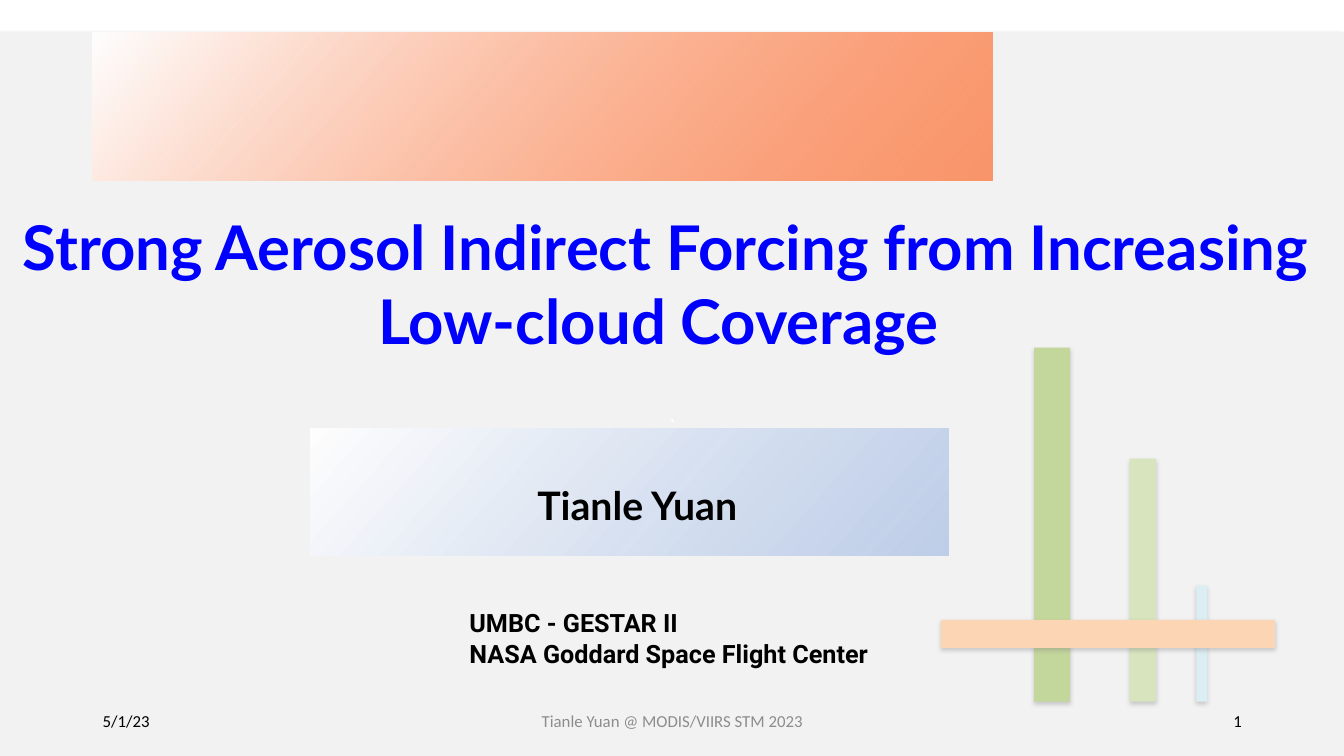
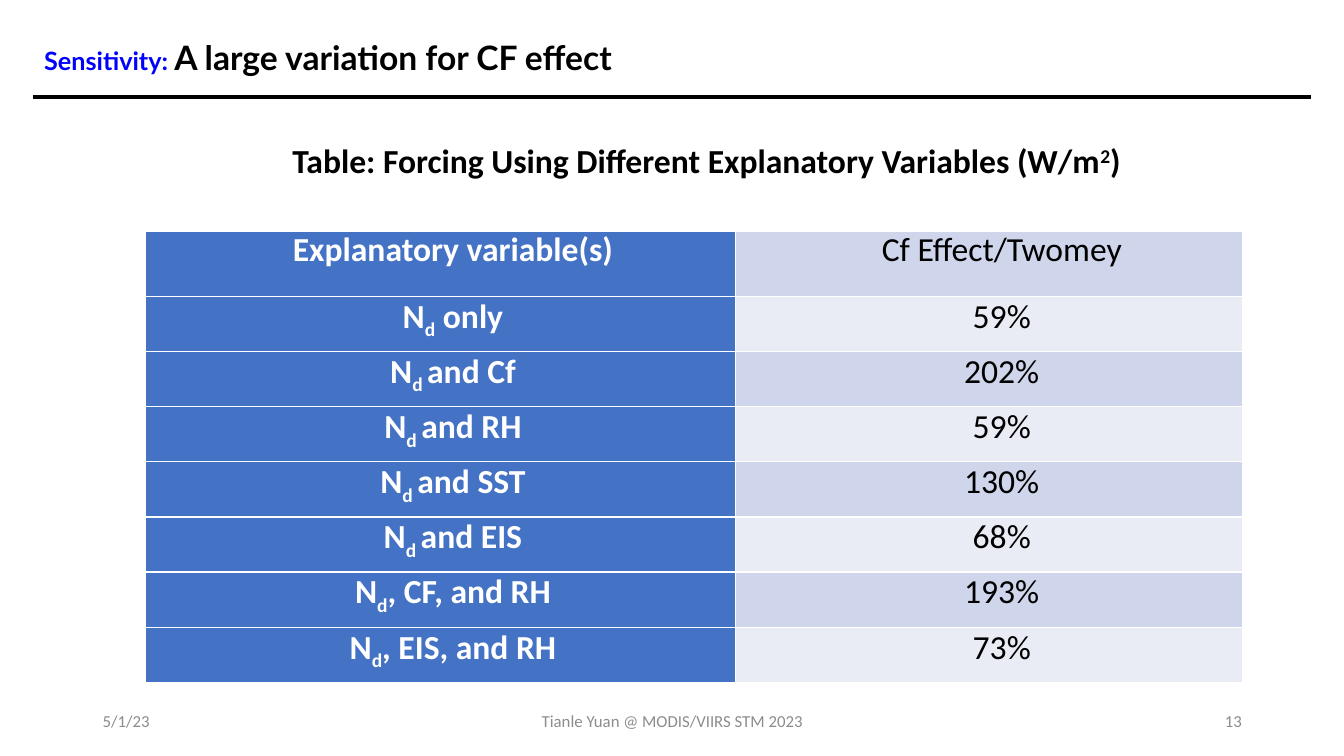
from lxml import etree
from pptx import Presentation
from pptx import util as u
from pptx.dml.color import RGBColor
from pptx.enum import shapes, text
from pptx.oxml import ns

Cm, Pt = u.Cm, u.Pt
LEFT, CENTER, RIGHT = text.PP_ALIGN.LEFT, text.PP_ALIGN.CENTER, text.PP_ALIGN.RIGHT

# Shared colours
BLACK = RGBColor(0x00, 0x00, 0x00)
WHITE = RGBColor(0xFF, 0xFF, 0xFF)
BLUE = RGBColor(0x00, 0x00, 0xFF)
FOOTER_GREY = RGBColor(0x8C, 0x8C, 0x8C)
PANEL_GREY = RGBColor(0xF2, 0xF2, 0xF2)
ORANGE = RGBColor(0xFF, 0x5A, 0x14)
PALE_BLUE = RGBColor(0xB4, 0xC7, 0xE7)
GREEN = RGBColor(0xC3, 0xD6, 0x9B)
LIGHT_GREEN = RGBColor(0xD7, 0xE4, 0xBD)
LIGHT_AQUA = RGBColor(0xDB, 0xEE, 0xF4)
PEACH = RGBColor(0xFC, 0xD5, 0xB5)
TABLE_BLUE = RGBColor(0x44, 0x72, 0xC4)
BANDS = [RGBColor(0xE9, 0xEB, 0xF5), RGBColor(0xCF, 0xD5, 0xEA)]


def add_run(paragraph, words, size, font="Calibri", colour=BLACK, bold=False, baseline=0):
    run = paragraph.add_run()
    run.text = words
    run.font.size = Pt(size)
    run.font.name = font
    run.font.color.rgb = colour
    run.font.bold = bold
    if baseline:
        run._r.get_or_add_rPr().set("baseline", str(baseline * 1000))


def place(shape, left, top, width, height, anchor=text.MSO_ANCHOR.MIDDLE, align=LEFT):
    """Position a text shape, set its frame and return its first paragraph."""
    shape.left, shape.top, shape.width, shape.height = map(Cm, (left, top, width, height))
    frame = shape.text_frame
    frame.word_wrap = True
    frame.auto_size = text.MSO_AUTO_SIZE.NONE
    frame.vertical_anchor = anchor
    paragraph = frame.paragraphs[0]
    paragraph.alignment = align
    paragraph.space_before = Pt(0)
    return paragraph


presentation = Presentation()
presentation.slide_width, presentation.slide_height = Cm(33.87), Cm(19.05)
cover = presentation.slides.add_slide(presentation.slide_layouts[0])
sensitivity = presentation.slides.add_slide(presentation.slide_layouts[5])

# Cover: panel and bars, with a soft shadow
blocks = [
    (0, 0.81, 33.87, 18.24, PANEL_GREY),
    (26.06, 8.76, 0.91, 8.92, GREEN),
    (28.47, 11.56, 0.66, 6.12, LIGHT_GREEN),
    (30.15, 14.76, 0.28, 2.92, LIGHT_AQUA),
    (23.72, 15.62, 8.41, 0.71, PEACH),
]
for left, top, width, height, colour in blocks:
    block = cover.shapes.add_shape(
        shapes.MSO_SHAPE.RECTANGLE, Cm(left), Cm(top), Cm(width), Cm(height))
    block.fill.solid()
    block.fill.fore_color.rgb = colour
    block.line.fill.background()
    block.shadow.inherit = False
    effects = block.element.spPr.find(ns.qn("a:effectLst"))
    shadow = etree.SubElement(effects, ns.qn("a:outerShdw"), blurRad="40000",
                              dist="23000", dir="5400000", rotWithShape="0")
    shade = etree.SubElement(shadow, ns.qn("a:srgbClr"), val="808080")
    etree.SubElement(shade, ns.qn("a:alpha"), val="35000")
    if colour == PANEL_GREY:
        paragraph = place(block, left, top, width, height, align=CENTER)
        block.text_frame.margin_top = Cm(1.75)
        add_run(paragraph, "`", 18, colour=WHITE)

# Cover: gradient bands, fading to white at the top left
bands = [
    (2.34, 0.81, 22.68, 3.73, ORANGE, 61),
    (7.82, 10.8, 16.08, 3.2, PALE_BLUE, 82),
]
for left, top, width, height, colour, opacity in bands:
    band = cover.shapes.add_shape(
        shapes.MSO_SHAPE.RECTANGLE, Cm(left), Cm(top), Cm(width), Cm(height))
    band.shadow.inherit = False
    band.line.fill.background()
    band.fill.gradient()
    band.fill.gradient_angle = 138
    start, end = band.fill.gradient_stops
    start.color.rgb, end.color.rgb = colour, WHITE
    start_colour = band.element.spPr.find(".//" + ns.qn("a:srgbClr"))
    etree.SubElement(start_colour, ns.qn("a:alpha"), val=str(opacity * 1000))

# Cover: title, author and affiliations
title, author = cover.shapes.title, cover.placeholders[1]
for placeholder in (title, author):
    cover.shapes.element.append(placeholder.element)  # bring to front
paragraph = place(title, 0, 4.32, 33.58, 5.61, align=CENTER)
add_run(paragraph, "Strong Aerosol Indirect Forcing from Increasing Low-cloud Coverage ",
        44, "Lato", BLUE, True)
paragraph = place(author, 11.68, 12.01, 8.76, 2.24, text.MSO_ANCHOR.TOP, CENTER)
add_run(paragraph, "Tianle Yuan", 28, "Lato", bold=True)

affiliations = cover.shapes.add_textbox(0, 0, 0, 0)
paragraph = place(affiliations, 11.58, 15.19, 10.62, 2.57, text.MSO_ANCHOR.TOP)
add_run(paragraph, "UMBC - GESTAR II", 18, "Roboto", bold=True)
paragraph = affiliations.text_frame.add_paragraph()
add_run(paragraph, "NASA Goddard Space Flight Center", 18, "Roboto", bold=True)

# Sensitivity: title and rule
paragraph = place(sensitivity.shapes.title, 0.86, 0.81, 27.76, 1.27)
add_run(paragraph, "Sensitivity: ", 18, "Lato", BLUE, True)
add_run(paragraph, "A large variation for CF effect", 24, "Lato", bold=True)
rule = sensitivity.shapes.add_connector(
    shapes.MSO_CONNECTOR.STRAIGHT, Cm(0.84), Cm(2.44), Cm(33.05), Cm(2.44))
rule.line.color.rgb = BLACK
rule.line.width = Pt(3)
etree.SubElement(rule.element.spPr, ns.qn("a:effectLst"))

# Sensitivity: table; each label is a list of (words, baseline)
rows = [
    ([("Table: Forcing Using Different Explanatory Variables (W/m", 0), ("2", 30), (")", 0)], ""),
    ([("Explanatory variable(s)", 0)], "Cf Effect/Twomey"),
    ([("N", 0), ("d", -25), (" only", 0)], "59%"),
    ([("N", 0), ("d ", -25), ("and Cf", 0)], "202%"),
    ([("N", 0), ("d ", -25), ("and RH", 0)], "59%"),
    ([("N", 0), ("d ", -25), ("and SST", 0)], "130%"),
    ([("N", 0), ("d ", -25), ("and EIS", 0)], "68%"),
    ([("N", 0), ("d", -25), (", CF, and RH", 0)], "193%"),
    ([("N", 0), ("d", -25), (", EIS, and RH", 0)], "73%"),
]
row_heights = [2.21, 1.68] + [1.39] * 7
table = sensitivity.shapes.add_table(
    len(rows), 2, Cm(3.66), Cm(3.58), Cm(27.66), Cm(sum(row_heights))).table
table.columns[0].width, table.columns[1].width = Cm(14.88), Cm(12.78)
table.cell(0, 0).merge(table.cell(0, 1))

for row, (label, value) in enumerate(rows):
    table.rows[row].height = Cm(row_heights[row])
    for column, parts in enumerate((label, [(value, 0)])):
        cell = table.cell(row, column)
        cell.margin_left, cell.margin_right = Cm(0.81), Cm(0.18)
        cell.margin_top = cell.margin_bottom = 0
        for side in ("lnL", "lnR", "lnT", "lnB"):
            width = Pt(3) if row == 0 and side == "lnB" else Pt(1)
            border = etree.SubElement(cell._tc.get_or_add_tcPr(), ns.qn("a:" + side), w=str(width))
            fill = etree.SubElement(border, ns.qn("a:solidFill"))
            etree.SubElement(fill, ns.qn("a:srgbClr"), val=str(WHITE))
        cell.fill.solid()
        if row == 0:
            cell.fill.fore_color.rgb = WHITE
        else:
            cell.fill.fore_color.rgb = BANDS[row % 2] if column else TABLE_BLUE
        if cell.is_spanned:
            continue
        paragraph = cell.text_frame.paragraphs[0]
        paragraph.alignment = CENTER
        if row == 1:
            paragraph.space_before = paragraph.space_after = Pt(6)
        colour = BLACK if row == 0 or column else WHITE
        for words, baseline in parts:
            add_run(paragraph, words, 24, colour=colour, bold=column == 0, baseline=baseline)

# Footers: date, event and page number
for slide, number, colour in ((cover, "1", BLACK), (sensitivity, "13", FOOTER_GREY)):
    footers = [
        ("5/1/23", 2.34, 7.62, LEFT, colour),
        ("Tianle Yuan @ MODIS/VIIRS STM 2023", 11.23, 11.43, CENTER, FOOTER_GREY),
        (number, 23.93, 7.62, RIGHT, colour),
    ]
    for words, left, width, align, footer_colour in footers:
        footer = slide.shapes.add_textbox(0, 0, 0, 0)
        paragraph = place(footer, left, 17.65, width, 1.02, align=align)
        add_run(paragraph, words, 12, colour=footer_colour)

presentation.save("out.pptx")
